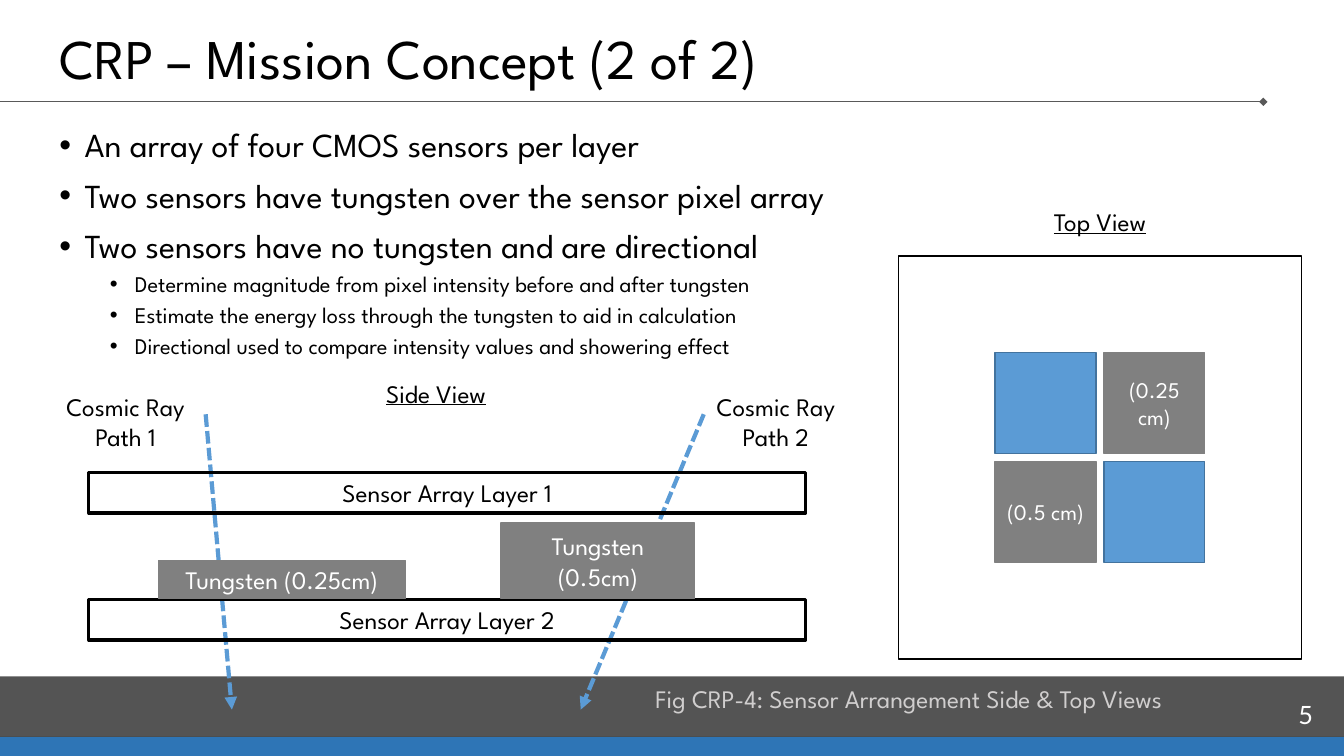
import pptx
import pptx.util
import pptx.dml.color
import pptx.enum.dml
import pptx.enum.shapes
import pptx.enum.text
import pptx.oxml.ns
from lxml import etree

Inches = pptx.util.Inches
Pt = pptx.util.Pt
ALIGN = pptx.enum.text.PP_ALIGN
ANCHOR = pptx.enum.text.MSO_ANCHOR
HEADING_FONT = "League Spartan"
NUMBER_FONT = "Lato"

COLORS = {
    "black": "000000",
    "white": "FFFFFF",
    "rule": "595959",
    "strip": "2E75B6",
    "sensor": "5B9BD5",
    "sensor_edge": "43739E",
    "tungsten": "808080",
    "caption": "D0CECE",
}

BULLETS = [
    (0, "An array of four CMOS sensors per layer"),
    (0, "Two sensors have tungsten over the sensor pixel array"),
    (0, "Two sensors have no tungsten and are directional"),
    (1, "Determine magnitude from pixel intensity before and after\u00a0tungsten".replace("\u00a0", " ")),
    (1, "Estimate the energy loss through the tungsten to aid in calculation"),
    (1, "Directional used to compare intensity values and showering effect"),
]


def rgb(name):
    return pptx.dml.color.RGBColor.from_string(COLORS[name])


def add_child(parent, tag, **attributes):
    return etree.SubElement(parent, pptx.oxml.ns.qn(tag), attributes)


def style_font(font, size, color, face=HEADING_FONT):
    font.size = Pt(size)
    font.name = face
    font.color.rgb = rgb(color)


def add_block(slide, box, fill=None, edge=None, weight=1, label="", size=18, color="white"):
    block = slide.shapes.add_shape(
        pptx.enum.shapes.MSO_SHAPE.RECTANGLE, *map(Inches, box))
    block.shadow.inherit = False
    if fill:
        block.fill.solid()
        block.fill.fore_color.rgb = rgb(fill)
    else:
        block.fill.background()
    if edge:
        block.line.color.rgb = rgb(edge)
        block.line.width = Pt(weight)
    else:
        block.line.fill.background()
    if label:
        frame = block.text_frame
        frame.text = label
        frame.vertical_anchor = ANCHOR.MIDDLE
        frame.paragraphs[0].alignment = ALIGN.CENTER
        style_font(frame.paragraphs[0].runs[0].font, size, color)
    return block


def add_label(slide, box, text, size=18, color="black", face=HEADING_FONT,
              align=ALIGN.CENTER, anchor=ANCHOR.TOP, underline=False):
    frame = slide.shapes.add_textbox(*map(Inches, box)).text_frame
    frame.word_wrap = True
    frame.vertical_anchor = anchor
    frame.text = text
    paragraph = frame.paragraphs[0]
    paragraph.alignment = align
    font = paragraph.runs[0].font
    style_font(font, size, color, face)
    if underline:
        font.underline = True
    return paragraph


def add_line(slide, start, end, color, weight, tail, dash=None):
    line = slide.shapes.add_connector(
        pptx.enum.shapes.MSO_CONNECTOR.STRAIGHT, *map(Inches, start + end))
    line.line.color.rgb = rgb(color)
    line.line.width = Pt(weight)
    if dash:
        line.line.dash_style = dash
    add_child(line.line._get_or_add_ln(), "a:tailEnd", type=tail)
    add_child(line._element.spPr, "a:effectLst")


def add_bullets(slide, box):
    frame = slide.shapes.add_textbox(*map(Inches, box)).text_frame
    frame.word_wrap = True
    frame.text = "\n".join(text for _, text in BULLETS)
    for index, (level, _) in enumerate(BULLETS):
        paragraph = frame.paragraphs[index]
        paragraph.level = level
        paragraph.line_spacing = 0.9
        if index:
            paragraph.space_before = Pt(5 if level else 10)
        properties = paragraph._p.get_or_add_pPr()
        properties.set("marL", str(Inches(0.25 + 0.5 * level)))
        properties.set("indent", str(Inches(-0.25)))
        add_child(properties, "a:buFont", typeface="Arial")
        add_child(properties, "a:buChar", char="•")
        style_font(paragraph.runs[0].font, 16 if level else 24, "black")


def add_frame(slide):
    add_line(slide, (0, 1.01), (12.53, 1.01), "rule", 1, "diamond")
    add_block(slide, (0, 7.31, 13.33, 0.2), "strip")
    footer = add_block(slide, (0, 6.71, 13.33, 0.6), "black")
    footer_color = footer._element.spPr.find(".//" + pptx.oxml.ns.qn("a:srgbClr"))
    add_child(footer_color, "a:alpha", val="67000")
    title = add_label(slide, (0.49, 0.13, 11.99, 0.83), "CRP – Mission Concept (2 of 2)",
                      40, align=ALIGN.LEFT, anchor=ANCHOR.BOTTOM)
    title.line_spacing = 0.9
    add_label(slide, (12.56, 6.89, 0.78, 0.4), "5", color="white",
              face=NUMBER_FONT, anchor=ANCHOR.MIDDLE)


def add_top_view(slide):
    left, top, pitch = 9.87, 3.5, 1.08
    tungsten_labels = [["", "(0.25 cm)"], ["(0.5 cm)", ""]]
    for row, labels in enumerate(tungsten_labels):
        for column, label in enumerate(labels):
            fill, edge = ("tungsten", "tungsten") if label else ("sensor", "sensor_edge")
            add_block(slide, (left + column * pitch, top + row * pitch, 1, 1),
                      fill, edge, label=label, size=16)
    add_block(slide, (8.91, 2.54, 4, 4), edge="black")
    add_label(slide, (10.25, 2, 1.32, 0.4), "Top View", underline=True)


def add_side_view(slide):
    for start_x, end_x in ((2.04, 2.3), (6.98, 5.76)):
        add_line(slide, (start_x, 4.11), (end_x, 7.04), "sensor", 3, "triangle",
                 pptx.enum.dml.MSO_LINE.SQUARE_DOT)
    for number, top in ((1, 4.69), (2, 5.95)):
        add_block(slide, (0.88, top, 7.11, 0.4), edge="black", weight=2.25,
                  label=f"Sensor Array Layer {number}", color="black")
    for box, thickness in (((4.97, 5.19, 1.92, 0.75), "0.5cm"),
                           ((1.57, 5.56, 2.45, 0.38), "0.25cm")):
        add_block(slide, box, "tungsten", "tungsten", label=f"Tungsten ({thickness})")
    add_label(slide, (3.63, 3.7, 1.39, 0.4), "Side View", underline=True)
    for number, left in ((1, 0.49), (2, 6.94)):
        add_label(slide, (left, 3.83, 1.51, 0.71), f"Cosmic Ray Path {number}")
    add_label(slide, (5.86, 6.73, 6.31, 0.4),
              "Fig CRP-4: Sensor Arrangement Side & Top Views", color="caption")


def main():
    deck = pptx.Presentation()
    deck.slide_width = Inches(13.33)
    deck.slide_height = Inches(7.5)
    slide = deck.slides.add_slide(deck.slide_layouts[6])
    add_frame(slide)
    add_bullets(slide, (0.49, 1.23, 12.39, 5.37))
    add_top_view(slide)
    add_side_view(slide)
    deck.save("out.pptx")


if __name__ == "__main__":
    main()
